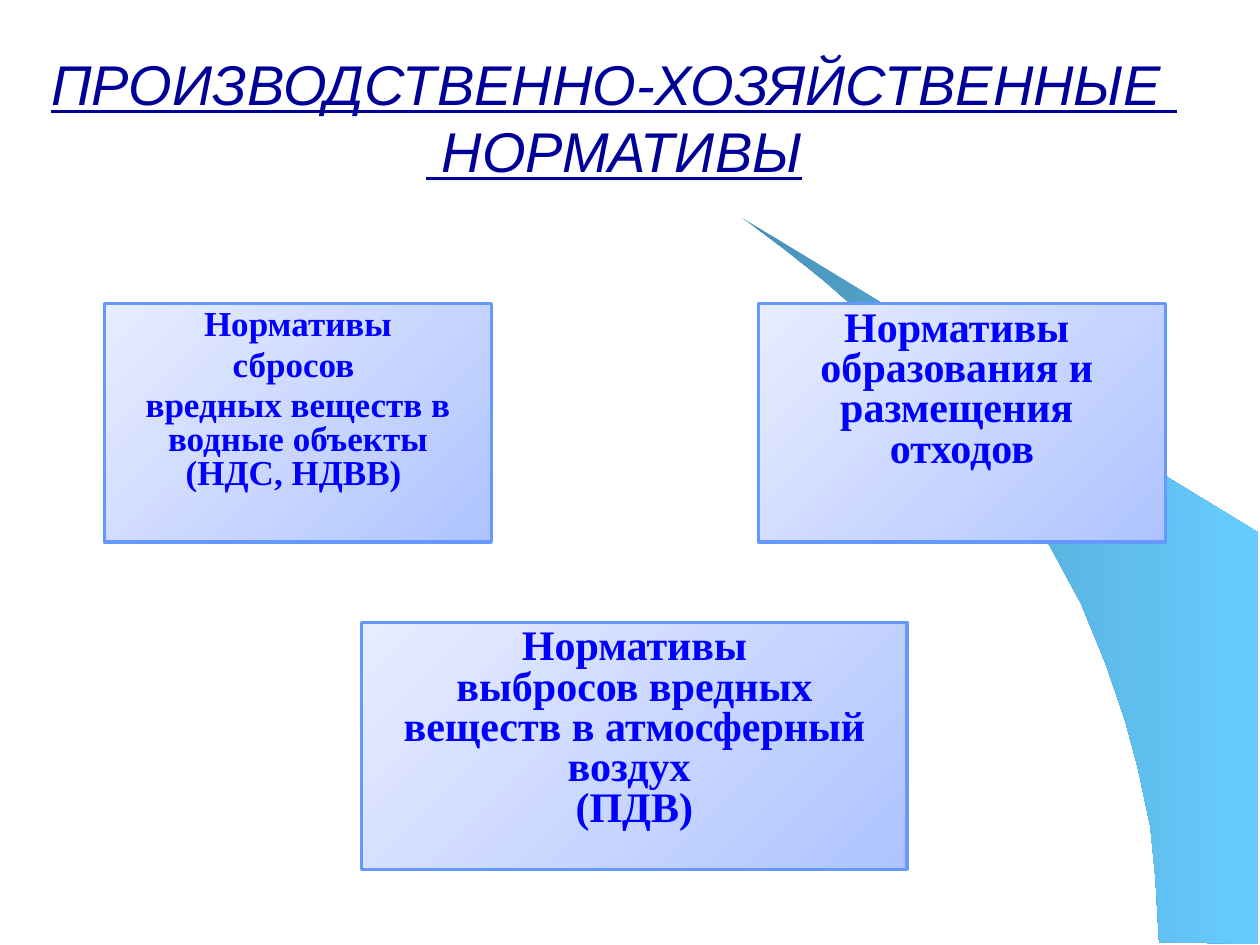
import pptx
import pptx.util
import pptx.dml.color
import pptx.enum.text
import pptx.enum.shapes

Inches = pptx.util.Inches
Pt = pptx.util.Pt
COLORS = {
    "title": "000099",
    "text": "0000FF",
    "border": "6699FF",
    "box_light": "E7ECFF",
    "box_dark": "AFC4FF",
    "swoosh_dark": "4992B6",
    "swoosh_light": "66CCFF",
}


def fill_gradient(shape, start, end, angle):
    shape.shadow.inherit = False
    shape.fill.gradient()
    shape.fill.gradient_angle = angle
    for stop, name in zip(shape.fill.gradient_stops, (start, end)):
        stop.color.rgb = pptx.dml.color.RGBColor.from_string(COLORS[name])


def add_run(paragraph, text, font_name, size, color):
    run = paragraph.add_run()
    run.text = text
    run.font.name = font_name
    run.font.size = Pt(size)
    run.font.color.rgb = pptx.dml.color.RGBColor.from_string(COLORS[color])
    return run


presentation = pptx.Presentation()
presentation.slide_width = Inches(10)
presentation.slide_height = Inches(7.5)
slide = presentation.slides.add_slide(presentation.slide_layouts[6])

swoosh_points = [
    (9.2, 7.48), (9.99, 7.49), (9.99, 4.23), (5.89, 1.73), (6.24, 1.99),
    (6.53, 2.22), (6.85, 2.5), (7.16, 2.8), (7.62, 3.3), (8.03, 3.84),
    (8.32, 4.31), (8.58, 4.79), (8.78, 5.28), (8.93, 5.72), (9.03, 6.09),
    (9.13, 6.56), (9.17, 6.96),
]
vertices = [(Inches(x), Inches(y)) for x, y in swoosh_points]
builder = slide.shapes.build_freeform(*vertices[0])
builder.add_line_segments(vertices[1:], close=True)
swoosh = builder.convert_to_shape()
fill_gradient(swoosh, "swoosh_dark", "swoosh_light", 0)
swoosh.line.fill.background()

title = slide.shapes.add_textbox(Inches(0.25), Inches(0.3), Inches(9.25), Inches(1.25))
title.text_frame.word_wrap = True
title.text_frame.vertical_anchor = pptx.enum.text.MSO_ANCHOR.MIDDLE
paragraph = title.text_frame.paragraphs[0]
paragraph.alignment = pptx.enum.text.PP_ALIGN.CENTER
for index, line in enumerate(["ПРОИЗВОДСТВЕННО-ХОЗЯЙСТВЕННЫЕ ", " НОРМАТИВЫ"]):
    if index:
        paragraph.add_line_break()
    run = add_run(paragraph, line, "Arial", 32, "title")
    run.font.italic = True
    run.font.underline = True

boxes = [
    (0.83, 2.41, 3.07, 1.89, 20, 4, 0.2,
     ["Нормативы", "сбросов ", "вредных веществ в водные объекты (НДС, НДВВ) "]),
    (6.02, 2.41, 3.23, 1.89, 24, 0, 0.1,
     ["Нормативы ", "образования и ", "размещения ", "отходов"]),
    (2.87, 4.94, 4.33, 1.96, 24, 0, 0.1,
     ["Нормативы", "выбросов вредных веществ в атмосферный воздух ", "(ПДВ)"]),
]
for left, top, width, height, size, space_before, inset, lines in boxes:
    box = slide.shapes.add_shape(
        pptx.enum.shapes.MSO_SHAPE.RECTANGLE,
        Inches(left), Inches(top), Inches(width), Inches(height),
    )
    fill_gradient(box, "box_light", "box_dark", 315)
    box.line.color.rgb = pptx.dml.color.RGBColor.from_string(COLORS["border"])
    box.line.width = Pt(2)
    frame = box.text_frame
    frame.word_wrap = True
    frame.vertical_anchor = pptx.enum.text.MSO_ANCHOR.TOP
    frame.margin_left = frame.margin_right = Inches(inset)
    for index, line in enumerate(lines):
        paragraph = frame.add_paragraph() if index else frame.paragraphs[0]
        paragraph.alignment = pptx.enum.text.PP_ALIGN.CENTER
        paragraph.line_spacing = 0.8
        paragraph.space_before = Pt(space_before)
        run = add_run(paragraph, line, "Times New Roman", size, "text")
        run.font.bold = True

presentation.save("out.pptx")
